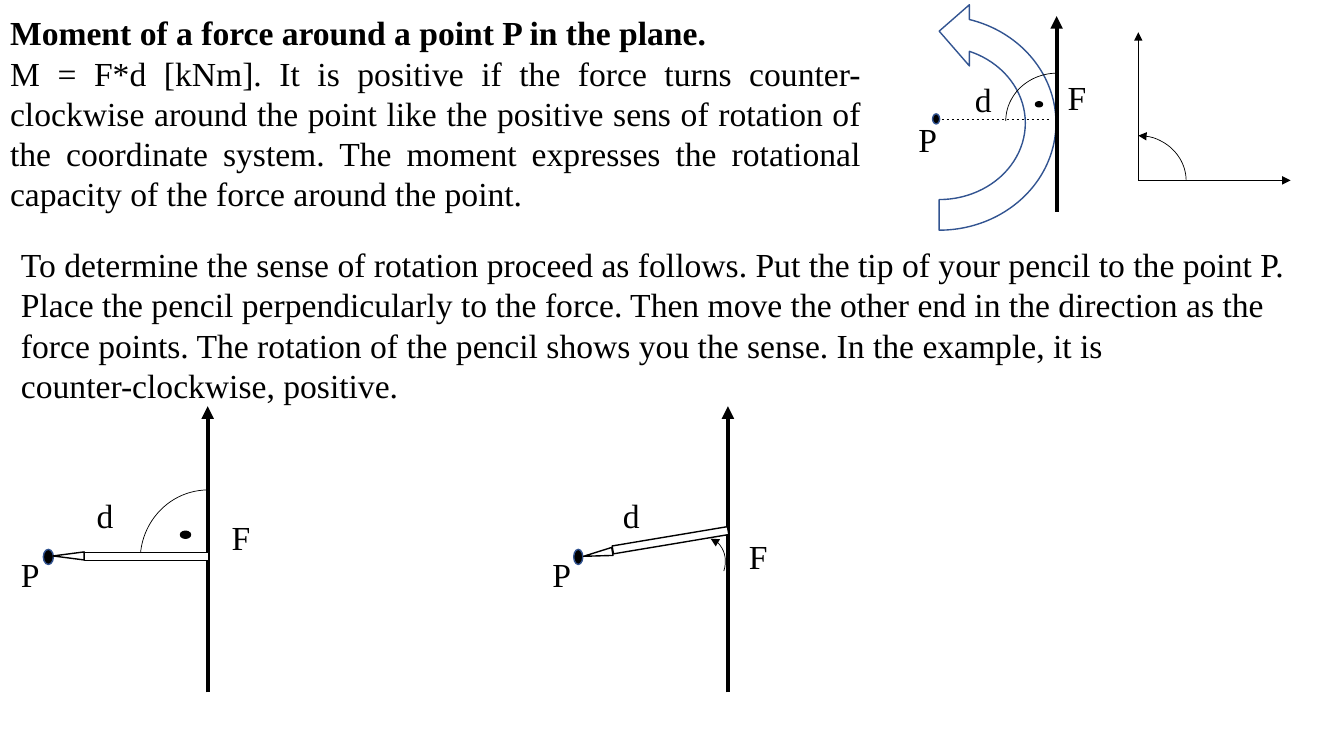
from pptx import Presentation
from pptx.dml.color import RGBColor
from pptx.enum.dml import MSO_LINE
from pptx.enum.shapes import MSO_CONNECTOR, MSO_SHAPE
from pptx.enum.text import MSO_ANCHOR, MSO_AUTO_SIZE, PP_ALIGN
from pptx.oxml.ns import qn
from pptx.util import Pt
from lxml import etree

PX = 9144  # 100 px to the inch
LINE = MSO_CONNECTOR.STRAIGHT
OVAL, ARC, RECT = MSO_SHAPE.OVAL, MSO_SHAPE.ARC, MSO_SHAPE.RECTANGLE
TIP, TURN = MSO_SHAPE.ISOSCELES_TRIANGLE, MSO_SHAPE.CIRCULAR_ARROW
DASH = MSO_LINE.DASH
LEFT, EVEN = PP_ALIGN.LEFT, PP_ALIGN.JUSTIFY
TOP, GROW = MSO_ANCHOR.TOP, MSO_AUTO_SIZE.SHAPE_TO_FIT_TEXT

THEME = {
    "ink": RGBColor(0, 0, 0),
    "white": RGBColor(255, 255, 255),
    "blue": RGBColor(0x32, 0x54, 0x91),
    "font": "Times New Roman",
    "size": Pt(24),
    "thin": Pt(0.5),
    "edge": Pt(1),
    "bold": Pt(3),
}


def write(box, *lines, align=LEFT, wrap=True, head=False):
    """Fill a box with paragraphs; head makes the first one bold."""
    frame = box.text_frame
    frame.word_wrap, frame.auto_size = wrap, GROW
    frame.vertical_anchor = TOP
    for i, line in enumerate(lines):
        para = frame.paragraphs[0] if i == 0 else frame.add_paragraph()
        para.alignment = align
        run = para.add_run()
        run.text = line
        font = run.font
        font.name, font.size = THEME["font"], THEME["size"]
        font.bold = head and i == 0
        font.color.rgb = THEME["ink"]


def draw(group, kind, at, fill=None, line="ink", width="edge", turn=0,
         flip=False, dash=None, end=None):
    """Add a line (at = two points) or a shape (at = left, top, size)."""
    at = [n * PX for n in at]
    if kind is LINE:  # identity, as LINE and RECT share a number
        item = group.shapes.add_connector(kind, *at)
    else:
        item = group.shapes.add_shape(kind, *at)
        item.rotation = turn
        if fill:
            item.fill.solid()
            item.fill.fore_color.rgb = THEME[fill]
        else:
            item.fill.background()
    item.line.color.rgb = THEME[line]
    item.line.width = THEME[width]
    if dash:
        item.line.dash_style = dash
    props = item._element.spPr
    if flip:
        props.find(qn("a:xfrm")).set("flipH", "1")
    if end:
        etree.SubElement(props.find(qn("a:ln")), qn("a:" + end), type="triangle")
    etree.SubElement(props, qn("a:effectLst"))


deck = Presentation()
deck.slide_width, deck.slide_height = 1333 * PX, 750 * PX
slide = deck.slides.add_slide(deck.slide_layouts[5])

# Definition
title = slide.shapes.title
title.left, title.top, title.width, title.height = [
    n * PX for n in (0, 7, 864, 212)]
write(title,
      "Moment of a force around a point P in the plane.",
      "M = F*d [kNm]. It is positive if the force turns counter-clockwise "
      "around the point like the positive sens of rotation of the coordinate "
      "system. The moment expresses the rotational capacity of the force "
      "around the point.",
      align=EVEN, head=True)

# Three sketches of point, lever arm and force
sketches = [
    {"point": (925, 113, 7, 10), "force": (1048, 210, 1048, 16),
     "d": (957, 73, 75, 50), "F": (1049, 71, 116, 50), "P": (901, 113, 39, 50),
     "arc": (1001, 69, 95, 102), "turn": 270, "dot": (1027, 101, 7, 5)},
    {"point": (43, 545, 10, 15), "force": (206, 687, 206, 403),
     "d": (86, 486, 100, 74), "F": (220, 508, 153, 74), "P": (11, 545, 52, 74),
     "arc": (137, 488, 139, 135), "turn": 270, "dot": (179, 527, 10, 7),
     "rod": (84, 548, 123, 8), "tip": (64, 536, 8, 31), "tilt": 0},
    {"point": (569, 545, 9, 15), "force": (722, 687, 722, 403),
     "d": (608, 486, 94, 74), "F": (733, 527, 145, 74), "P": (538, 545, 49, 74),
     "arc": (674, 533, 45, 53), "turn": 18.3, "end": "headEnd",
     "rod": (607, 532, 116, 8), "tip": (589, 535, 8, 29), "tilt": 350.5},
]
for part in sketches:
    group = slide.shapes.add_group_shape()
    if "rod" not in part:
        # Sense of rotation, lever arm and axes
        draw(group, TURN, (810, -9, 243, 262), fill="white", line="blue",
             turn=90, flip=True)
        draw(group, LINE, (924, 118, 1040, 118), width="thin", dash=DASH)
        for x, y in ((1280, 179), (1129, 32)):
            draw(group, LINE, (1129, 179, x, y), width="thin", end="tailEnd")
        draw(group, ARC, (1084, 132, 90, 95), width="thin", turn=90,
             flip=True, end="tailEnd")
    draw(group, OVAL, part["point"], fill="ink", line="blue")
    draw(group, LINE, part["force"], width="bold", end="tailEnd")
    draw(group, ARC, part["arc"], width="thin", turn=part["turn"],
         end=part.get("end"))
    if "dot" in part:
        draw(group, OVAL, part["dot"], fill="ink")
    if "rod" in part:
        # Pencil
        tilt = part["tilt"]
        draw(group, RECT, part["rod"], fill="white", turn=tilt)
        draw(group, TIP, part["tip"], fill="white", turn=(tilt + 270) % 360)
    for name in "dFP":
        box = group.shapes.add_textbox(*[n * PX for n in part[name]])
        write(box, name, wrap=name != "P")

# Pencil rule
rule = slide.shapes.add_textbox(*[n * PX for n in (11, 237, 1280, 172)])
write(rule,
      "To determine the sense of rotation proceed as follows. Put the tip of "
      "your pencil to the point P.",
      "Place the pencil perpendicularly to the force. Then move the other end "
      "in the direction as the force points. The rotation of the pencil shows "
      "you the sense. In the example, it is",
      "counter-clockwise, positive.")

deck.save("out.pptx")
